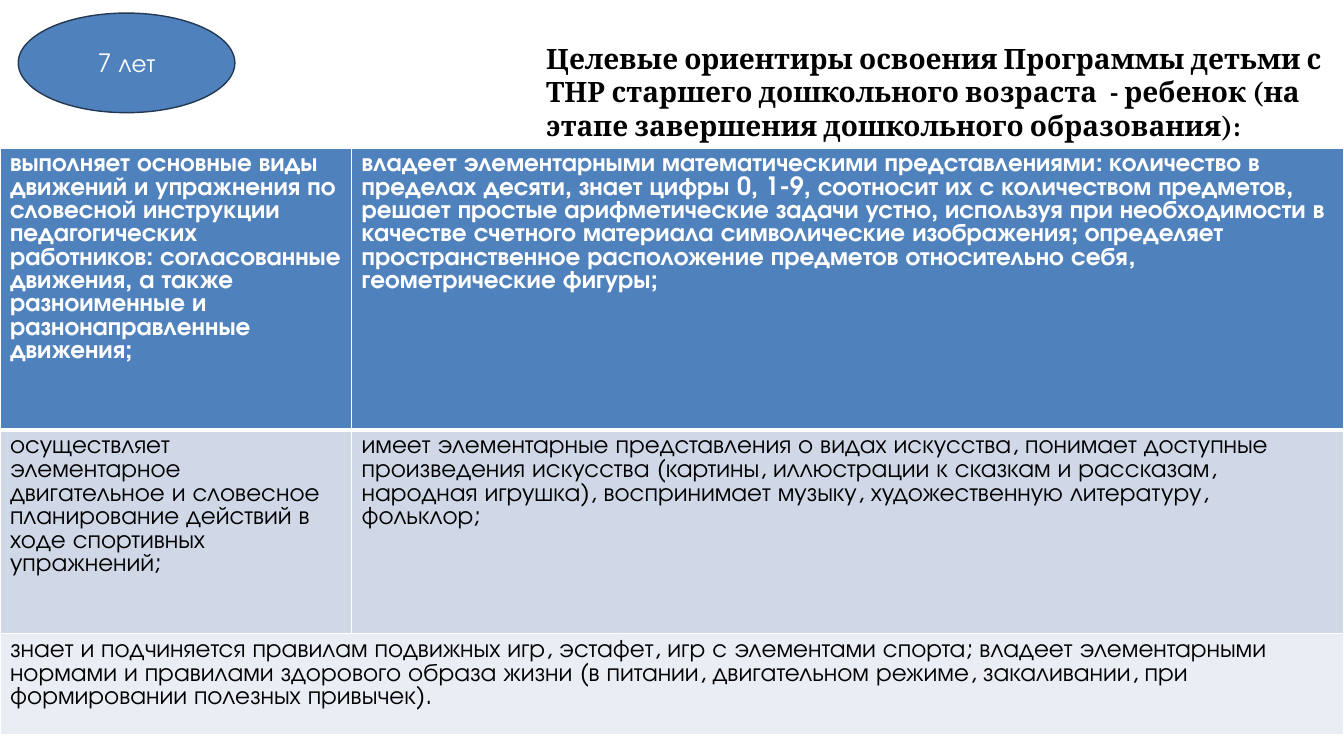
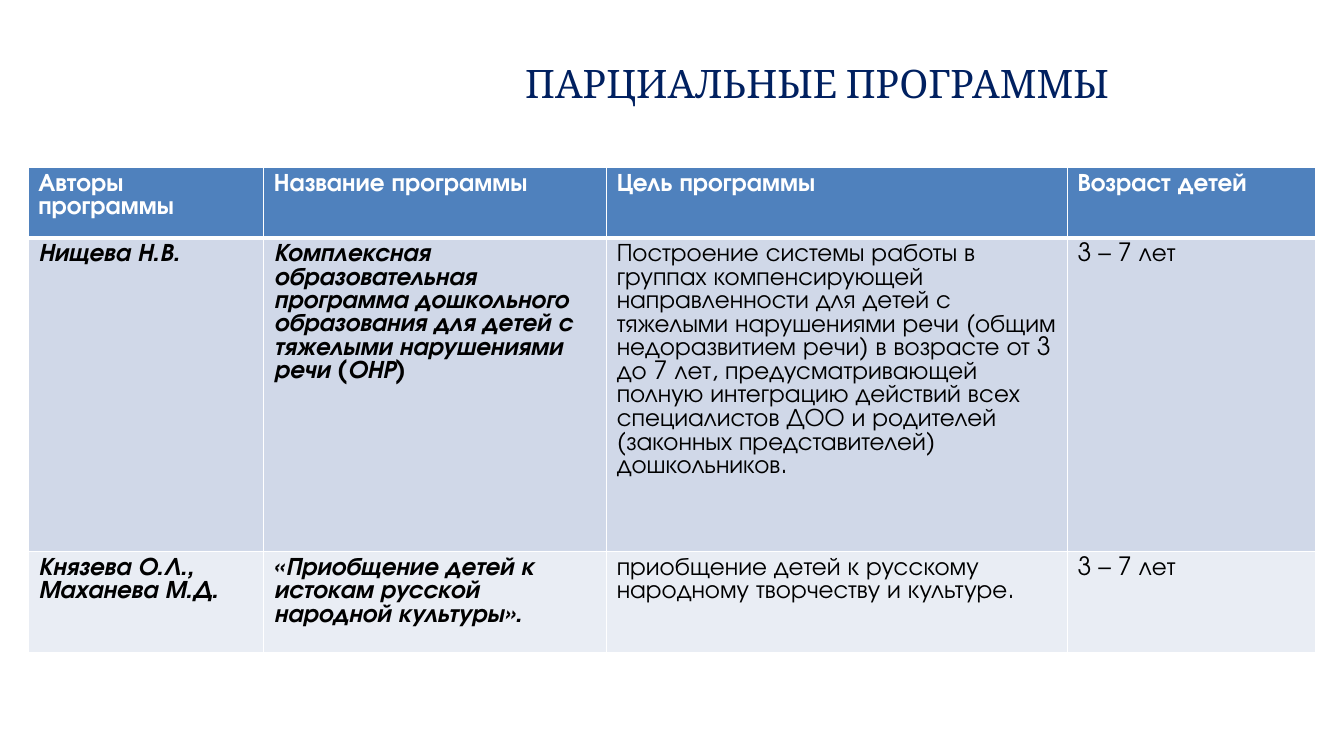
"""Build two slides on preschool programme targets and partial programmes."""
from dataclasses import dataclass

import lxml.etree
import pptx
import pptx.dml.color
import pptx.enum.shapes
import pptx.enum.text
import pptx.oxml.ns
import pptx.util

Cm = pptx.util.Cm
Pt = pptx.util.Pt
RGBColor = pptx.dml.color.RGBColor
qn = pptx.oxml.ns.qn
PP_ALIGN = pptx.enum.text.PP_ALIGN
MSO_ANCHOR = pptx.enum.text.MSO_ANCHOR

BLUE = RGBColor(0x4F, 0x81, 0xBD)
OUTLINE = RGBColor(0x23, 0x39, 0x53)
NAVY = RGBColor(0x00, 0x20, 0x60)
BAND_DARK = RGBColor(0xD0, 0xD8, 0xE8)
BAND_LIGHT = RGBColor(0xE9, 0xED, 0xF4)
WHITE = RGBColor(0xFF, 0xFF, 0xFF)
BLACK = RGBColor(0x00, 0x00, 0x00)
TITLE_FONT = "Cambria"
BODY_FONT = "TeX Gyre Adventor"
ROW_FILLS = (BLUE, BAND_DARK, BAND_LIGHT)


@dataclass(frozen=True)
class Box:
    """Position and size in centimetres."""
    left: float
    top: float
    width: float
    height: float

    def emu(self) -> tuple:
        return Cm(self.left), Cm(self.top), Cm(self.width), Cm(self.height)


@dataclass(frozen=True)
class Grid:
    """Table content, with sizes in centimetres."""
    left: float
    top: float
    cols: tuple
    rows: tuple
    cells: tuple
    emphasised: int = 0


def write(tf, text: str, *, font: str = BODY_FONT, size: float = 18,
          color: RGBColor = BLACK, bold: bool = False, italic: bool = False,
          align=PP_ALIGN.LEFT, anchor=MSO_ANCHOR.TOP) -> None:
    """Write one formatted paragraph into a text frame."""
    tf.vertical_anchor = anchor
    p = tf.paragraphs[0]
    p.alignment = align
    r = p.add_run()
    r.text = text
    r.font.name = font
    r.font.size = Pt(size)
    r.font.color.rgb = color
    r.font.bold = bold
    r.font.italic = italic


def add_slide(prs, title: str, box: Box, wrap: bool = True, **fmt):
    """Add a slide with a placed and formatted title."""
    s = prs.slides.add_slide(prs.slide_layouts[5])
    sp = s.shapes.title
    sp.left, sp.top, sp.width, sp.height = box.emu()
    tf = sp.text_frame
    tf.word_wrap = wrap
    tf.auto_size = pptx.enum.text.MSO_AUTO_SIZE.SHAPE_TO_FIT_TEXT
    write(tf, title, font=TITLE_FONT, **fmt)
    return s


def add_borders(cell, row: int) -> None:
    """Give a cell white borders, thicker below the header row."""
    widths = {"L": 1, "R": 1, "T": 3 if row == 1 else 1, "B": 3 if row == 0 else 1}
    tcPr = cell._tc.get_or_add_tcPr()
    for side, width in widths.items():
        ln = lxml.etree.SubElement(tcPr, qn(f"a:ln{side}"), w=str(Pt(width)))
        fill = lxml.etree.SubElement(ln, qn("a:solidFill"))
        lxml.etree.SubElement(fill, qn("a:srgbClr"), val=str(WHITE))


def add_grid(s, grid: Grid) -> None:
    """Add a table; a row with one text spans all columns."""
    box = Box(grid.left, grid.top, sum(grid.cols), sum(grid.rows))
    table = s.shapes.add_table(len(grid.rows), len(grid.cols), *box.emu()).table
    table.first_row = table.horz_banding = False
    for col, width in zip(table.columns, grid.cols):
        col.width = Cm(width)
    for i, (row, height) in enumerate(zip(table.rows, grid.rows)):
        row.height = Cm(height)
        texts = grid.cells[i]
        header = i == 0
        for j, cell in enumerate(row.cells):
            add_borders(cell, i)
            cell.fill.solid()
            cell.fill.fore_color.rgb = ROW_FILLS[i]
            if j < len(texts):
                strong = not header and j < grid.emphasised
                write(cell.text_frame, texts[j], color=WHITE if header else BLACK,
                      bold=header or strong, italic=strong)
        if len(texts) == 1:
            table.cell(i, 0).merge(table.cell(i, len(grid.cols) - 1))


def add_badge(s, text: str, box: Box) -> None:
    """Add an outlined ellipse with centred text."""
    sp = s.shapes.add_shape(pptx.enum.shapes.MSO_SHAPE.OVAL, *box.emu())
    sp.shadow.inherit = False
    sp.fill.solid()
    sp.fill.fore_color.rgb = BLUE
    sp.line.color.rgb = OUTLINE
    sp.line.width = Pt(1)
    write(sp.text_frame, text, color=WHITE, align=PP_ALIGN.CENTER,
          anchor=MSO_ANCHOR.MIDDLE)


TARGETS = Grid(0, 3.73, (8.86, 25.01), (7.09, 5.13, 2.54), (
    ("выполняет основные виды движений и упражнения по словесной инструкции "
     "педагогических работников: согласованные движения, а также разноименные "
     "и разнонаправленные движения;",
     "владеет элементарными математическими представлениями: количество в "
     "пределах десяти, знает цифры 0, 1-9, соотносит их с количеством "
     "предметов, решает простые арифметические задачи устно, используя при "
     "необходимости в качестве счетного материала символические изображения; "
     "определяет пространственное расположение предметов относительно себя, "
     "геометрические фигуры;"),
    ("осуществляет элементарное двигательное и словесное планирование действий "
     "в ходе спортивных упражнений;",
     "имеет элементарные представления о видах искусства, понимает доступные "
     "произведения искусства (картины, иллюстрации к сказкам и рассказам, "
     "народная игрушка), воспринимает музыку, художественную литературу, "
     "фольклор;"),
    ("знает и подчиняется правилам подвижных игр, эстафет, игр с элементами "
     "спорта; владеет элементарными нормами и правилами здорового образа жизни "
     "(в питании, двигательном режиме, закаливании, при формировании полезных "
     "привычек).",),
))

PROGRAMMES = Grid(0.71, 4.22, (5.94, 8.64, 11.61, 6.25), (1.75, 7.9, 2.54), (
    ("Авторы программы", "Название программы", "Цель программы", "Возраст детей"),
    ("Нищева Н.В.",
     "Комплексная образовательная программа дошкольного образования для детей "
     "с тяжелыми нарушениями речи (ОНР)",
     "Построение системы работы в группах компенсирующей направленности для "
     "детей с тяжелыми нарушениями речи (общим недоразвитием речи) в возрасте "
     "от 3 до 7 лет, предусматривающей полную интеграцию действий всех "
     "специалистов ДОО и родителей (законных представителей) дошкольников.",
     "3 – 7 лет"),
    ("Князева О.Л., Маханева М.Д.",
     "«Приобщение детей к истокам русской народной культуры».",
     "приобщение детей к русскому народному творчеству и культуре.",
     "3 – 7 лет"),
), emphasised=2)


def main() -> None:
    """Build and save the presentation."""
    prs = pptx.Presentation()
    prs.slide_width, prs.slide_height = Cm(33.87), Cm(19.05)

    s = add_slide(prs, "Целевые ориентиры освоения Программы детьми с ТНР старшего "
                  "дошкольного возраста  - ребенок (на этапе завершения "
                  "дошкольного образования):",
                  Box(13.51, 0.91, 20.8, 2.82), size=20, bold=True)
    add_grid(s, TARGETS)
    add_badge(s, "7 лет", Box(0.46, 0.33, 5.46, 2.51))

    s = add_slide(prs, "ПАРЦИАЛЬНЫЕ ПРОГРАММЫ", Box(12.98, 1.37, 15.8, 1.45),
                  wrap=False, size=28, color=NAVY)
    add_grid(s, PROGRAMMES)
    prs.save("out.pptx")


if __name__ == "__main__":
    main()
